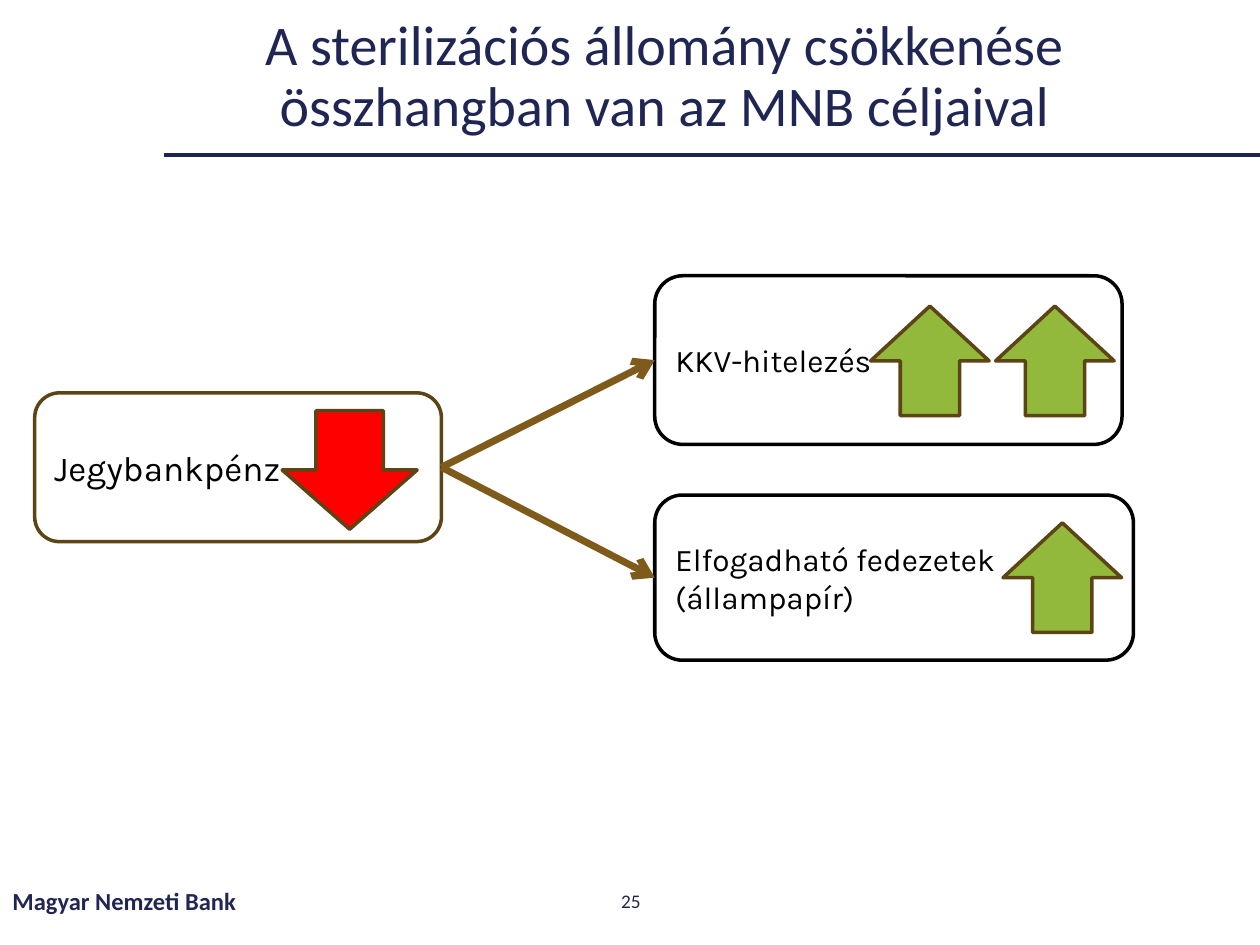
from dataclasses import dataclass

import lxml.etree
import pptx
import pptx.dml.color
import pptx.enum.shapes
import pptx.enum.text
import pptx.oxml.ns
import pptx.util

Cm = pptx.util.Cm
Pt = pptx.util.Pt
RGBColor = pptx.dml.color.RGBColor
MSO_SHAPE = pptx.enum.shapes.MSO_SHAPE
PP_ALIGN = pptx.enum.text.PP_ALIGN
qn = pptx.oxml.ns.qn

NAVY = RGBColor(0x20, 0x26, 0x53)
RULE_NAVY = RGBColor(0x1E, 0x24, 0x52)
BROWN = RGBColor(0x5D, 0x44, 0x15)
LIGHT_BROWN = RGBColor(0x7E, 0x5B, 0x1A)
GREEN = RGBColor(0x92, 0xB9, 0x3B)
RED = RGBColor(0xFF, 0x00, 0x00)
BLACK = RGBColor(0x00, 0x00, 0x00)
WHITE = RGBColor(0xFF, 0xFF, 0xFF)


@dataclass
class Area:
    left: float
    top: float
    width: float
    height: float

    def lengths(self) -> tuple:
        return Cm(self.left), Cm(self.top), Cm(self.width), Cm(self.height)


@dataclass
class Label:
    text: str
    size: int
    font: str = "Calibri"
    color: RGBColor = NAVY
    align: PP_ALIGN = PP_ALIGN.LEFT
    bold: bool = False
    line_spacing: float = 1.0


@dataclass
class Factor:
    area: Area
    text: str
    size: int
    border: RGBColor


@dataclass
class Trend:
    area: Area
    fill: RGBColor
    rotation: int


def write(frame, label: Label) -> None:
    frame.word_wrap = True
    frame.vertical_anchor = pptx.enum.text.MSO_ANCHOR.MIDDLE
    paragraph = frame.paragraphs[0]
    paragraph.alignment = label.align
    paragraph.line_spacing = label.line_spacing
    run = paragraph.add_run()
    run.text = label.text
    run.font.name = label.font
    run.font.size = Pt(label.size)
    run.font.bold = label.bold
    run.font.color.rgb = label.color


def add_outlined(slide, preset: MSO_SHAPE, area: Area, fill: RGBColor, border: RGBColor):
    shape = slide.shapes.add_shape(preset, *area.lengths())
    shape.shadow.inherit = False
    shape.fill.solid()
    shape.fill.fore_color.rgb = fill
    shape.line.color.rgb = border
    shape.line.width = Pt(2)
    return shape


def add_factor(slide, factor: Factor):
    box = add_outlined(slide, MSO_SHAPE.ROUNDED_RECTANGLE, factor.area, WHITE, factor.border)
    write(box.text_frame, Label(factor.text, factor.size, "Karla", BLACK))
    return box


def add_trend(slide, trend: Trend) -> None:
    arrow = add_outlined(slide, MSO_SHAPE.DOWN_ARROW, trend.area, trend.fill, BROWN)
    arrow.rotation = trend.rotation


def add_line(slide, start: tuple, end: tuple, color: RGBColor, width: float):
    line = slide.shapes.add_connector(
        pptx.enum.shapes.MSO_CONNECTOR.STRAIGHT, *map(Cm, start + end)
    )
    line.line.color.rgb = color
    line.line.width = Pt(width)
    lxml.etree.SubElement(line._element.spPr, qn("a:effectLst"))
    return line


def link(slide, cause, effect) -> None:
    line = add_line(slide, (0, 0), (1, 1), LIGHT_BROWN, 4)
    line.begin_connect(cause, 3)
    line.end_connect(effect, 1)
    lxml.etree.SubElement(line.line._get_or_add_ln(), qn("a:tailEnd"), type="arrow")


TEXTS = [
    (
        Area(3, 0.51, 20.8, 2.11),
        Label(
            "A sterilizációs állomány csökkenése összhangban van az MNB céljaival",
            32,
            align=PP_ALIGN.CENTER,
            line_spacing=0.9,
        ),
    ),
    (Area(0, 17.65, 8.59, 1.02), Label("Magyar Nemzeti Bank", 14, bold=True)),
    (Area(9.86, 17.65, 5.72, 1.02), Label("25", 11, align=PP_ALIGN.CENTER)),
]
CENTRAL_BANK_MONEY = Factor(Area(0.7, 7.92, 8.2, 3), "Jegybankpénz", 20, BROWN)
EFFECTS = [
    Factor(Area(13.2, 9.98, 9.65, 3.33), "Elfogadható fedezetek (állampapír)", 18, BLACK),
    Factor(Area(13.2, 5.56, 9.42, 3.4), "KKV-hitelezés", 18, BLACK),
]
TRENDS = [Trend(Area(5.69, 8.28, 2.72, 2.39), RED, 0)] + [
    Trend(Area(left, top, 2.39, 2.21), GREEN, 180)
    for left, top in [(20.07, 6.17), (20.22, 10.54), (17.55, 6.17)]
]


def main() -> None:
    deck = pptx.Presentation()
    deck.slide_width, deck.slide_height = Cm(25.4), Cm(19.05)
    slide = deck.slides.add_slide(deck.slide_layouts[6])

    add_line(slide, (3.3, 3.12), (25.4, 3.12), RULE_NAVY, 2.25)
    for area, label in TEXTS:
        write(slide.shapes.add_textbox(*area.lengths()).text_frame, label)

    cause = add_factor(slide, CENTRAL_BANK_MONEY)
    effects = [add_factor(slide, factor) for factor in EFFECTS]
    for trend in TRENDS:
        add_trend(slide, trend)
    for effect in effects:
        link(slide, cause, effect)

    deck.save("out.pptx")


if __name__ == "__main__":
    main()
